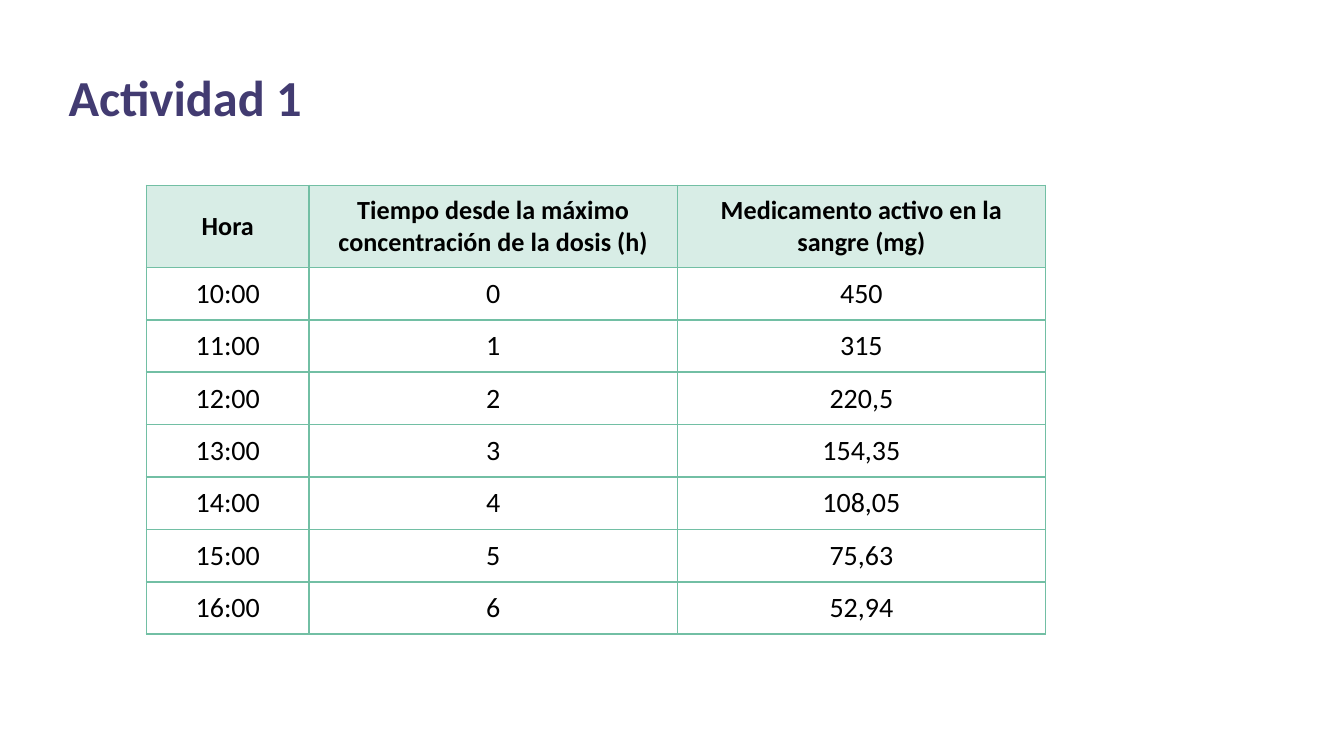
from lxml import etree
from pptx import Presentation
from pptx import util as u
from pptx.dml.color import RGBColor
from pptx.enum import text
from pptx.oxml import ns

SLIDE_WIDTH = 10
FONT = "Calibri"
HEADERS = [
    "Hora",
    "Tiempo desde la máximo concentración de la dosis (h)",
    "Medicamento activo en la sangre (mg)",
]
DOSES = ["450", "315", "220,5", "154,35", "108,05", "75,63", "52,94"]
FIRST_HOUR = 10
COLUMN_WIDTHS = [1.21, 2.74, 2.74]
HEADER_HEIGHT = 0.61
ROW_HEIGHT = 0.39


def color(hex_value):
    return RGBColor.from_string(hex_value)


def style_paragraph(paragraph, size, hex_value, bold, alignment):
    paragraph.alignment = alignment
    paragraph.font.name = FONT
    paragraph.font.size = u.Pt(size)
    paragraph.font.bold = bold
    paragraph.font.color.rgb = color(hex_value)


def set_margins(target, horizontal, vertical):
    target.margin_left = target.margin_right = u.Inches(horizontal)
    target.margin_top = target.margin_bottom = u.Inches(vertical)


def set_borders(cell, hex_value, width):
    properties = cell._tc.get_or_add_tcPr()
    for position, side in enumerate(("lnL", "lnR", "lnT", "lnB")):
        line = etree.Element(ns.qn(f"a:{side}"), w=str(u.Pt(width)))
        fill = etree.SubElement(line, ns.qn("a:solidFill"))
        etree.SubElement(fill, ns.qn("a:srgbClr"), val=hex_value)
        properties.insert(position, line)


def add_title(slide, left, top, width, height):
    title = slide.shapes.title
    title.left, title.top = u.Inches(left), u.Inches(top)
    title.width, title.height = u.Inches(width), u.Inches(height)
    frame = title.text_frame
    frame.text = "Actividad 1"
    frame.word_wrap = True
    frame.auto_size = text.MSO_AUTO_SIZE.SHAPE_TO_FIT_TEXT
    frame.vertical_anchor = text.MSO_ANCHOR.TOP
    set_margins(frame, 0.07, 0.04)
    style_paragraph(frame.paragraphs[0], 27, "423B71", True, text.PP_ALIGN.LEFT)


def fill_cell(cell, content, is_header):
    cell.text = content
    cell.vertical_anchor = text.MSO_ANCHOR.MIDDLE
    set_margins(cell, 0.07, 0.07)
    if is_header:
        cell.fill.solid()
        cell.fill.fore_color.rgb = color("D8EDE6")
    else:
        cell.fill.background()
    set_borders(cell, "72BFA4", 1)
    style_paragraph(
        cell.text_frame.paragraphs[0],
        14 if is_header else 15,
        "000000",
        is_header,
        text.PP_ALIGN.CENTER,
    )


def add_dose_table(slide, left, top):
    rows = [HEADERS] + [
        [f"{FIRST_HOUR + elapsed}:00", str(elapsed), dose]
        for elapsed, dose in enumerate(DOSES)
    ]
    height = HEADER_HEIGHT + ROW_HEIGHT * len(DOSES)
    table = slide.shapes.add_table(
        len(rows), len(HEADERS), u.Inches(left), u.Inches(top),
        u.Inches(sum(COLUMN_WIDTHS)), u.Inches(height),
    ).table
    table.horz_banding = False
    for column, width in zip(table.columns, COLUMN_WIDTHS):
        column.width = u.Inches(width)
    for index, values in enumerate(rows):
        is_header = index == 0
        table.rows[index].height = u.Inches(HEADER_HEIGHT if is_header else ROW_HEIGHT)
        for cell, content in zip(table.rows[index].cells, values):
            fill_cell(cell, content, is_header)


def main():
    presentation = Presentation()
    presentation.slide_width = u.Inches(SLIDE_WIDTH)
    presentation.slide_height = u.Inches(SLIDE_WIDTH * 9 / 16)
    slide = presentation.slides.add_slide(presentation.slide_layouts[5])
    add_title(slide, 0.44, 0.45, 6.7, 0.53)
    add_dose_table(slide, 1.09, 1.38)
    presentation.save("out.pptx")


if __name__ == "__main__":
    main()
